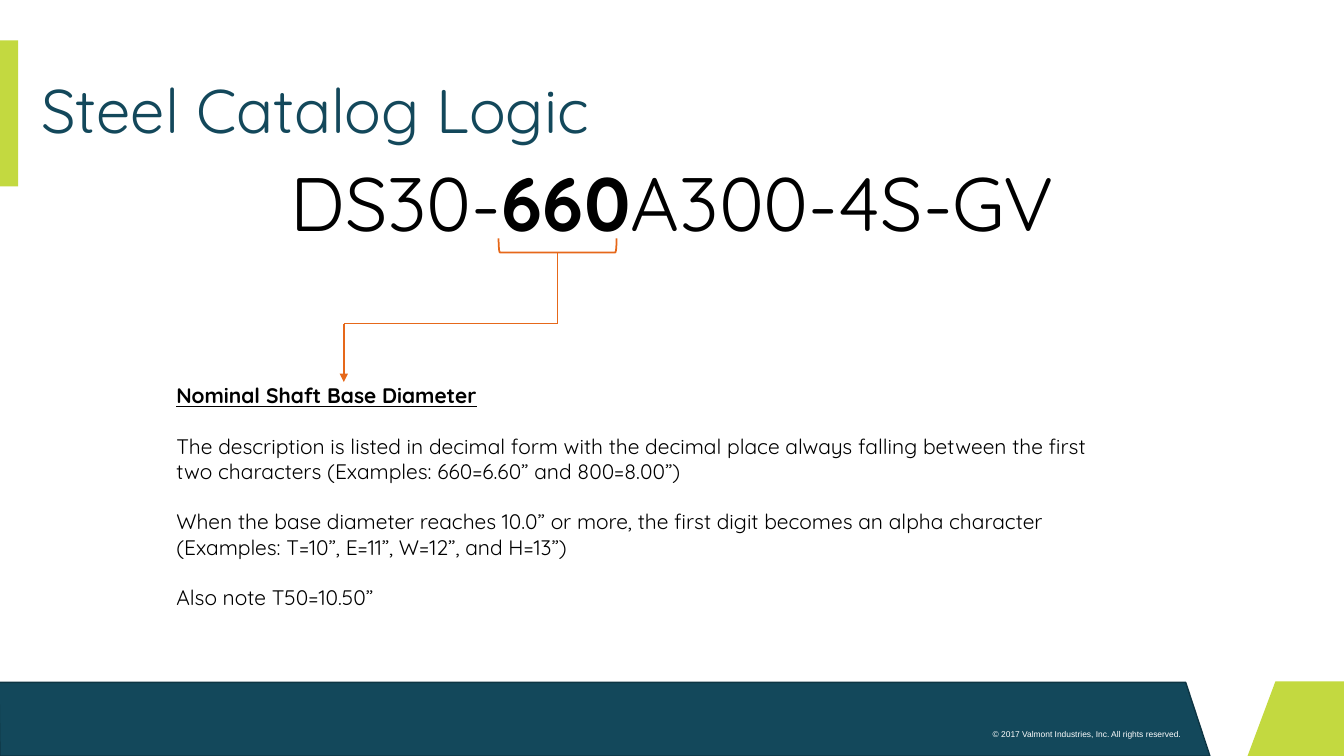
from dataclasses import dataclass

from lxml.etree import SubElement
from pptx import Presentation
from pptx.dml.color import RGBColor
from pptx.enum.shapes import MSO_CONNECTOR as CONN, MSO_SHAPE as SHAPE
from pptx.enum.text import MSO_ANCHOR as ANCHOR, MSO_AUTO_SIZE as AUTO, PP_ALIGN as ALIGN
from pptx.oxml.ns import qn
from pptx.util import Pt

PX = 9144
NAVY, NAVY_EDGE, LIME, ORANGE = "13485B", "0E3543", "C3D940", "E6681A"
BLACK, WHITE = "000000", "FFFFFF"
FONT = "Quicksand"
Point = tuple[int, int]
Box = tuple[int, int, int, int]


@dataclass
class Band:
    points: list[Point]
    fill: str
    edge: str | None = None


@dataclass
class Leader:
    start: Point
    end: Point
    arrow: bool = False


@dataclass
class Para:
    runs: list[str]
    size: float
    font: str = FONT
    color: str = BLACK
    align: ALIGN = ALIGN.LEFT
    bold: bool = False
    underline: bool = False
    bold_run: int | None = None
    gap: int = 0


def emu(*lengths: int) -> list[int]:
    return [n * PX for n in lengths]


def rgb(color: str) -> RGBColor:
    return RGBColor.from_string(color)


def paint(sp, fill: str | None, edge: str | None = None, width: float = 1) -> None:
    sp.shadow.inherit = False
    if fill:
        sp.fill.solid()
        sp.fill.fore_color.rgb = rgb(fill)
    else:
        sp.fill.background()
    if edge:
        sp.line.color.rgb = rgb(edge)
        sp.line.width = Pt(width)
    else:
        sp.line.fill.background()


def draw_band(s, band: Band) -> None:
    first, *rest = band.points
    builder = s.shapes.build_freeform(*first, scale=PX)
    builder.add_line_segments(rest, close=True)
    paint(builder.convert_to_shape(), band.fill, band.edge)


def draw_leader(s, leader: Leader) -> None:
    sp = s.shapes.add_connector(CONN.STRAIGHT, *emu(*leader.start, *leader.end))
    sp.line.color.rgb = rgb(ORANGE)
    sp.line.width = Pt(1.25)
    if leader.arrow:
        SubElement(sp.line._get_or_add_ln(), qn("a:tailEnd"), type="triangle")
    SubElement(sp._element.spPr, qn("a:effectLst"))


def write_para(p, para: Para) -> None:
    p.alignment = para.align
    if para.gap:
        p.space_before = Pt(para.gap)
    p.font.name = para.font
    p.font.size = Pt(para.size)
    p.font.color.rgb = rgb(para.color)
    p.font.bold = para.bold
    p.font.underline = para.underline
    for i, text in enumerate(para.runs):
        r = p.add_run()
        r.text = text
        if i == para.bold_run:
            r.font.bold = True


def add_text(s, box: Box, paras: list[Para]) -> None:
    tf = s.shapes.add_textbox(*emu(*box)).text_frame
    tf.word_wrap = True
    tf.auto_size = AUTO.SHAPE_TO_FIT_TEXT
    for i, para in enumerate(paras):
        write_para(tf.add_paragraph() if i else tf.paragraphs[0], para)


def set_title(s, box: Box, para: Para) -> None:
    sp = s.shapes.title
    sp.left, sp.top, sp.width, sp.height = emu(*box)
    tf = sp.text_frame
    tf.word_wrap = True
    tf.auto_size = AUTO.NONE
    tf.vertical_anchor = ANCHOR.MIDDLE
    p = tf.paragraphs[0]
    p.line_spacing = 0.9
    write_para(p, para)


BANDS = [
    Band([(0, 750), (-1, 677), (1176, 677), (1200, 750)], NAVY, NAVY_EDGE),
    Band([(1334, 676), (1265, 676), (1237, 751), (1334, 751)], LIME),
]
LEADERS = [
    Leader((341, 321), (341, 379), arrow=True),
    Leader((553, 251), (553, 321)),
    Leader((341, 321), (553, 321)),
]
NOTES = [
    "The description is listed in decimal form with the decimal place always falling "
    "between the first two characters (Examples: 660=6.60” and 800=8.00”)",
    "When the base diameter reaches 10.0” or more, the first digit becomes an alpha "
    "character (Examples: T=10”, E=11”, W=12”, and H=13”)",
    "Also note T50=10.50”",
]


def main() -> None:
    prs = Presentation()
    prs.slide_width, prs.slide_height = emu(1333, 750)
    s = prs.slides.add_slide(prs.slide_layouts[5])

    for band in BANDS:
        draw_band(s, band)
    paint(s.shapes.add_shape(SHAPE.RECTANGLE, *emu(0, 40, 18, 145)), LIME)
    add_text(s, (931, 718, 250, 20), [
        Para(["© 2017 Valmont Industries, Inc. All rights reserved."],
             6, "Arial", WHITE, ALIGN.RIGHT)])

    set_title(s, (31, 40, 1303, 145), Para(["Steel Catalog Logic"], 44, color=NAVY))
    add_text(s, (272, 150, 790, 101), [
        Para(["DS30-", "660", "A300-4S-GV"], 54, align=ALIGN.CENTER, bold_run=1)])

    bracket = s.shapes.add_shape(SHAPE.RIGHT_BRACKET, *emu(546, 185, 14, 117))
    bracket.rotation = 90
    paint(bracket, None, ORANGE, 1.25)
    for leader in LEADERS:
        draw_leader(s, leader)

    heading = Para(["Nominal Shaft Base Diameter"], 15, bold=True, underline=True)
    add_text(s, (165, 375, 942, 237),
             [heading] + [Para([note], 15, gap=18) for note in NOTES])

    prs.save("out.pptx")


if __name__ == "__main__":
    main()
